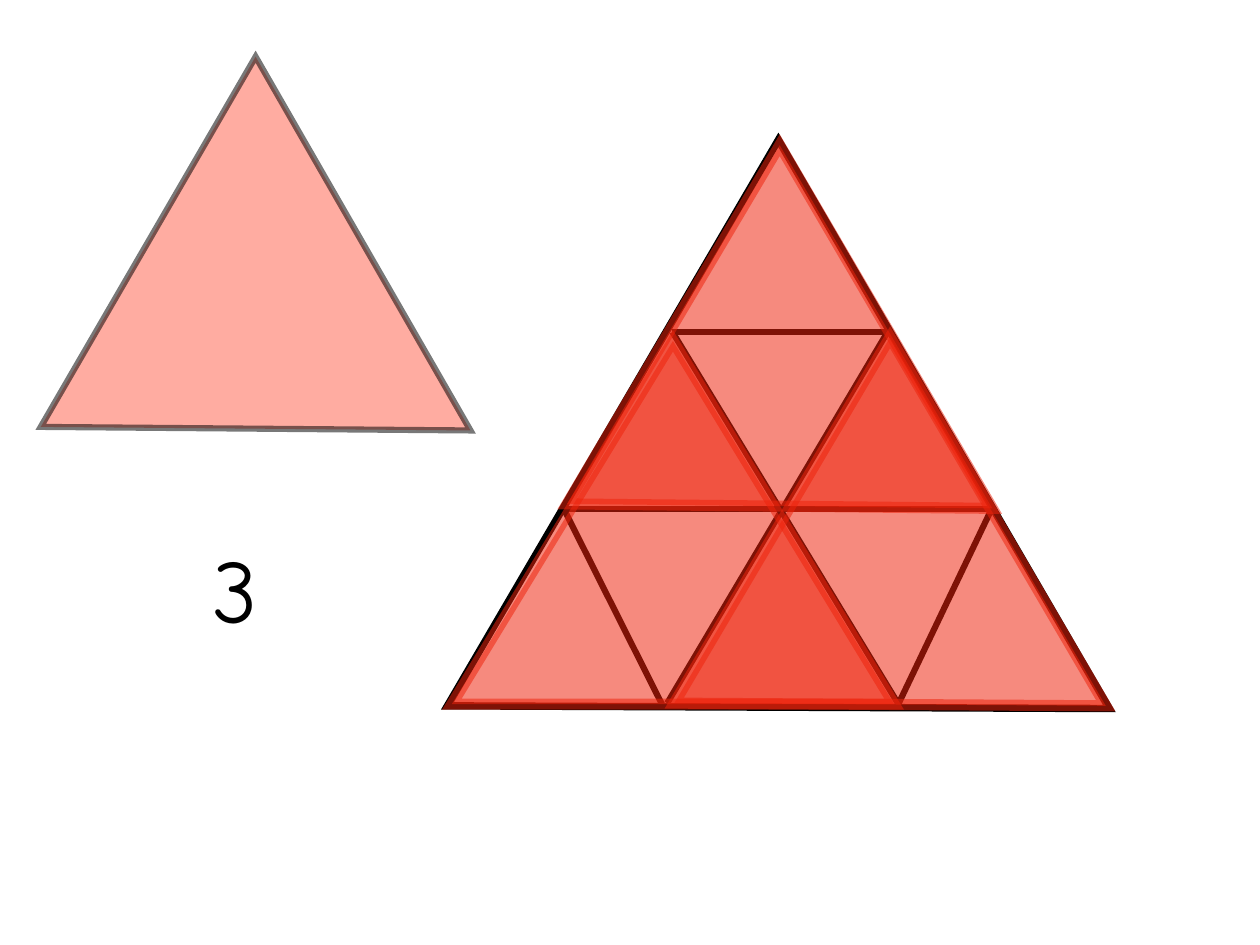
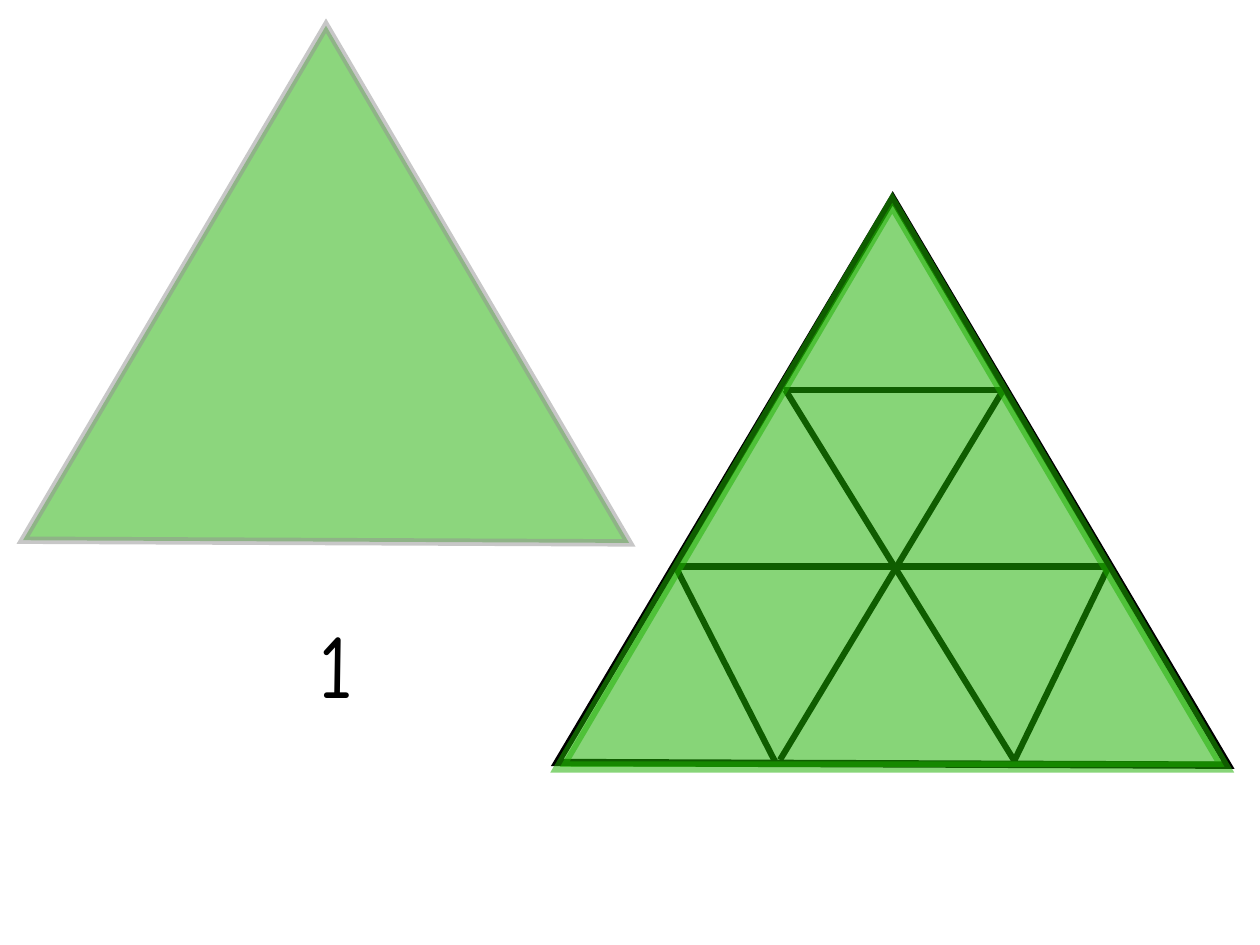
from lxml.etree import SubElement
from pptx import Presentation
from pptx.dml.color import RGBColor
from pptx.enum.shapes import MSO_CONNECTOR as Connector
from pptx.enum.text import MSO_ANCHOR, MSO_AUTO_SIZE, PP_ALIGN
from pptx.oxml.ns import qn
from pptx.util import Inches, Pt

# Shared style
BLACK, GREY = "000000", "929292"
RED, LIGHT_RED, GREEN = "EE230C", "FF644E", "1EB001"
FONT, NUMBER_SIZE = "Comic Neue", 73
OPACITY = 53
GRID_LINE, RULE_LINE, TILE_LINE = 6, 5, 9

# Inner rules of the puzzle: x1, y1, x2, y2 inside a box of GRID_SIZE
GRID_SIZE = (7.47, 6.42)
GRID_RULES = [
    (2.53, 2.17, 4.95, 2.17),
    (1.34, 4.17, 6.14, 4.17),
    (2.54, 2.17, 5.12, 6.42),
    (1.32, 4.18, 2.44, 6.41),
    (4.96, 2.18, 2.48, 6.36),
    (6.14, 4.17, 5.07, 6.41),
]


def paint(color_format, color, opacity=100):
    """Set a solid fill or line colour, see-through if opacity is below 100."""
    color_format.solid()
    color_format.fore_color.rgb = RGBColor.from_string(color)
    if opacity < 100:
        for rgb in color_format._xPr.iter(qn("a:srgbClr")):
            SubElement(rgb, qn("a:alpha"), val=str(opacity * 1000))


def triangle(shapes, box, lift, line, width, fill=None, opacity=100):
    """Draw a triangle filling the box, its left corner lifted from the base."""
    left, top, wide, high = box
    corners = [(left + wide, top + high), (left, top + high - lift)]
    builder = shapes.build_freeform(Inches(left + wide / 2), Inches(top))
    builder.add_line_segments([(Inches(x), Inches(y)) for x, y in corners], close=True)
    outline = builder.convert_to_shape()
    outline.shadow.inherit = False
    if fill:
        paint(outline.fill, fill, opacity)
    else:
        outline.fill.background()
    outline.line.width = Pt(width)
    paint(outline.line.fill, line, opacity)
    SubElement(outline.line._ln, qn("a:miter"), lim="400000")


def puzzle_grid(slide, box):
    """Draw the large triangle with its inner rules as one group."""
    left, top, wide, high = box
    shapes = slide.shapes.add_group_shape().shapes
    triangle(shapes, box, 0.03, BLACK, GRID_LINE)
    scale_x, scale_y = wide / GRID_SIZE[0], high / GRID_SIZE[1]
    for x1, y1, x2, y2 in GRID_RULES:
        rule = shapes.add_connector(
            Connector.STRAIGHT,
            Inches(left + x1 * scale_x), Inches(top + y1 * scale_y),
            Inches(left + x2 * scale_x), Inches(top + y2 * scale_y))
        rule.line.width = Pt(RULE_LINE)
        paint(rule.line.fill, BLACK)
        SubElement(rule._element.spPr, qn("a:effectLst"))


def count_label(slide, box, count):
    """Write the number of triangles of this size."""
    label = slide.shapes.add_textbox(*map(Inches, box))
    frame = label.text_frame
    frame.margin_left = frame.margin_right = Inches(0.06)
    frame.margin_top = frame.margin_bottom = Inches(0.06)
    frame.word_wrap = False
    frame.auto_size = MSO_AUTO_SIZE.SHAPE_TO_FIT_TEXT
    frame.vertical_anchor = MSO_ANCHOR.MIDDLE
    frame.text = count
    paragraph = frame.paragraphs[0]
    paragraph.alignment = PP_ALIGN.CENTER
    font = paragraph.runs[0].font
    font.name, font.size = FONT, Pt(NUMBER_SIZE)
    font.color.rgb = RGBColor.from_string(BLACK)


def counting_slide(deck, grid, tiles, tile_color, sample, count, count_box):
    """Build a slide: grid, highlighted tiles, sample triangle and count."""
    slide = deck.slides.add_slide(deck.slide_layouts[6])
    puzzle_grid(slide, grid)
    for box, lift in tiles:
        triangle(slide.shapes, box, lift, tile_color, TILE_LINE, tile_color, OPACITY)
    triangle(slide.shapes, **sample)
    count_label(slide, count_box, count)


def main():
    deck = Presentation()
    deck.slide_width, deck.slide_height = Inches(14.22), Inches(10.67)

    # Three medium triangles
    counting_slide(
        deck,
        grid=(5.05, 1.58, 7.47, 6.42),
        tiles=[((5.1, 3.85, 4.99, 4.1), 0),
               ((7.61, 3.81, 4.87, 4.16), 0.03),
               ((6.4, 1.64, 4.8, 4.1), 0.05)],
        tile_color=RED,
        sample=dict(box=(0.46, 0.64, 4.85, 4.22), lift=0.04, line=BLACK,
                    width=5, fill=LIGHT_RED, opacity=OPACITY),
        count="3", count_box=(2.29, 5.88, 0.74, 1.51))

    # One large triangle
    counting_slide(
        deck,
        grid=(6.29, 2.24, 7.57, 6.4),
        tiles=[((6.32, 2.29, 7.5, 6.37), 0)],
        tile_color=GREEN,
        sample=dict(box=(0.26, 0.29, 6.84, 5.84), lift=0.03, line=GREY,
                    width=6, fill=GREEN, opacity=51),
        count="1", count_box=(3.5, 6.73, 0.58, 1.51))

    deck.save("out.pptx")


if __name__ == "__main__":
    main()
